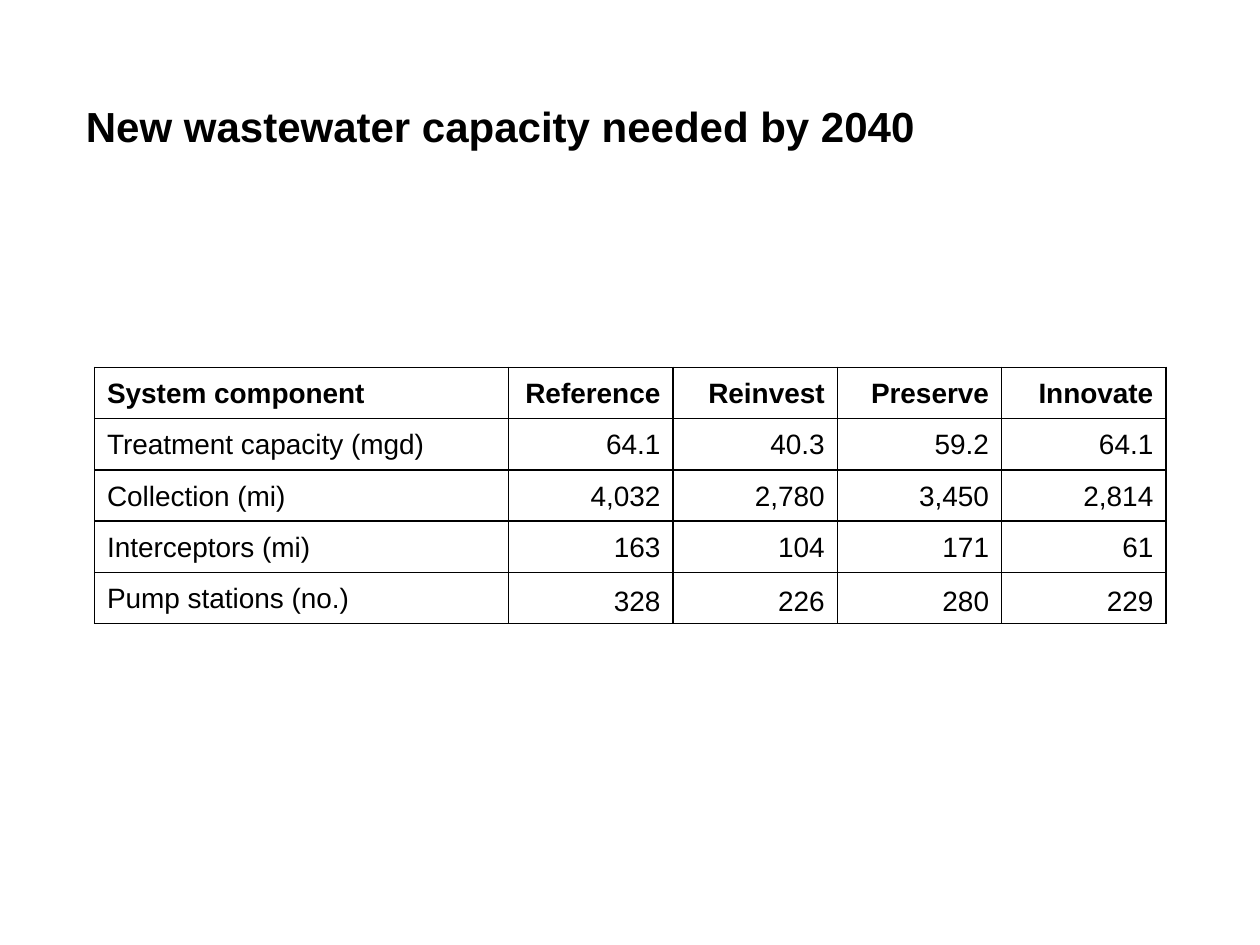
"""Build a slide with a table of wastewater capacity needed by 2040."""
from lxml import etree
from pptx import Presentation
from pptx.dml.color import RGBColor
from pptx.enum.text import MSO_ANCHOR, MSO_AUTO_SIZE, PP_ALIGN
from pptx.oxml.ns import qn
from pptx.util import Pt

LEFT, RIGHT = PP_ALIGN.LEFT, PP_ALIGN.RIGHT
TOP, BOTTOM = MSO_ANCHOR.TOP, MSO_ANCHOR.BOTTOM
BLACK = RGBColor(0, 0, 0)
FONT = "Arial"

TITLE = "New wastewater capacity needed by 2040"
ROWS = [
    ("System component", "Reference", "Reinvest", "Preserve", "Innovate"),
    ("Treatment capacity (mgd)", "64.1", "40.3", "59.2", "64.1"),
    ("Collection (mi)", "4,032", "2,780", "3,450", "2,814"),
    ("Interceptors (mi)", "163", "104", "171", "61"),
    ("Pump stations (no.)", "328", "226", "280", "229"),
]
COL_WIDTHS = [236.7] + [93.9] * 4
ROW_HEIGHT = 29.3


def write(tf, text, size=16, bold=False, align=LEFT, spacing=None):
    p = tf.paragraphs[0]
    p.alignment = align
    p.line_spacing = spacing
    r = p.add_run()
    r.text = text
    r.font.name, r.font.size, r.font.bold = FONT, Pt(size), bold
    r.font.color.rgb = BLACK


def add_borders(cell):
    tc_pr = cell._tc.get_or_add_tcPr()
    for i, side in enumerate(("lnL", "lnR", "lnT", "lnB")):
        ln = etree.Element(qn(f"a:{side}"), w=str(Pt(1)))
        fill = etree.SubElement(ln, qn("a:solidFill"))
        etree.SubElement(fill, qn("a:srgbClr"), val=str(BLACK))
        tc_pr.insert(i, ln)


def add_table(slide):
    shape = slide.shapes.add_table(
        len(ROWS), len(COL_WIDTHS), Pt(54), Pt(210),
        Pt(sum(COL_WIDTHS)), Pt(ROW_HEIGHT * len(ROWS)))
    table = shape.table
    table.horz_banding = False
    for col, width in zip(table.columns, COL_WIDTHS):
        col.width = Pt(width)
    for i, values in enumerate(ROWS):
        table.rows[i].height = Pt(ROW_HEIGHT)
        for j, text in enumerate(values):
            cell = table.cell(i, j)
            cell.fill.background()
            last_number = i == len(ROWS) - 1 and j > 0
            cell.vertical_anchor = BOTTOM if last_number else TOP
            write(cell.text_frame, text, bold=i == 0,
                  align=RIGHT if j else LEFT, spacing=1.15)
            add_borders(cell)


def main():
    prs = Presentation()
    prs.slide_width, prs.slide_height = Pt(720), Pt(540)
    slide = prs.slides.add_slide(prs.slide_layouts[6])
    tf = slide.shapes.add_textbox(Pt(42), Pt(54), Pt(504), Pt(36)).text_frame
    tf.word_wrap = True
    tf.auto_size = MSO_AUTO_SIZE.SHAPE_TO_FIT_TEXT
    write(tf, TITLE, size=24, bold=True)
    add_table(slide)
    prs.save("out.pptx")


if __name__ == "__main__":
    main()
